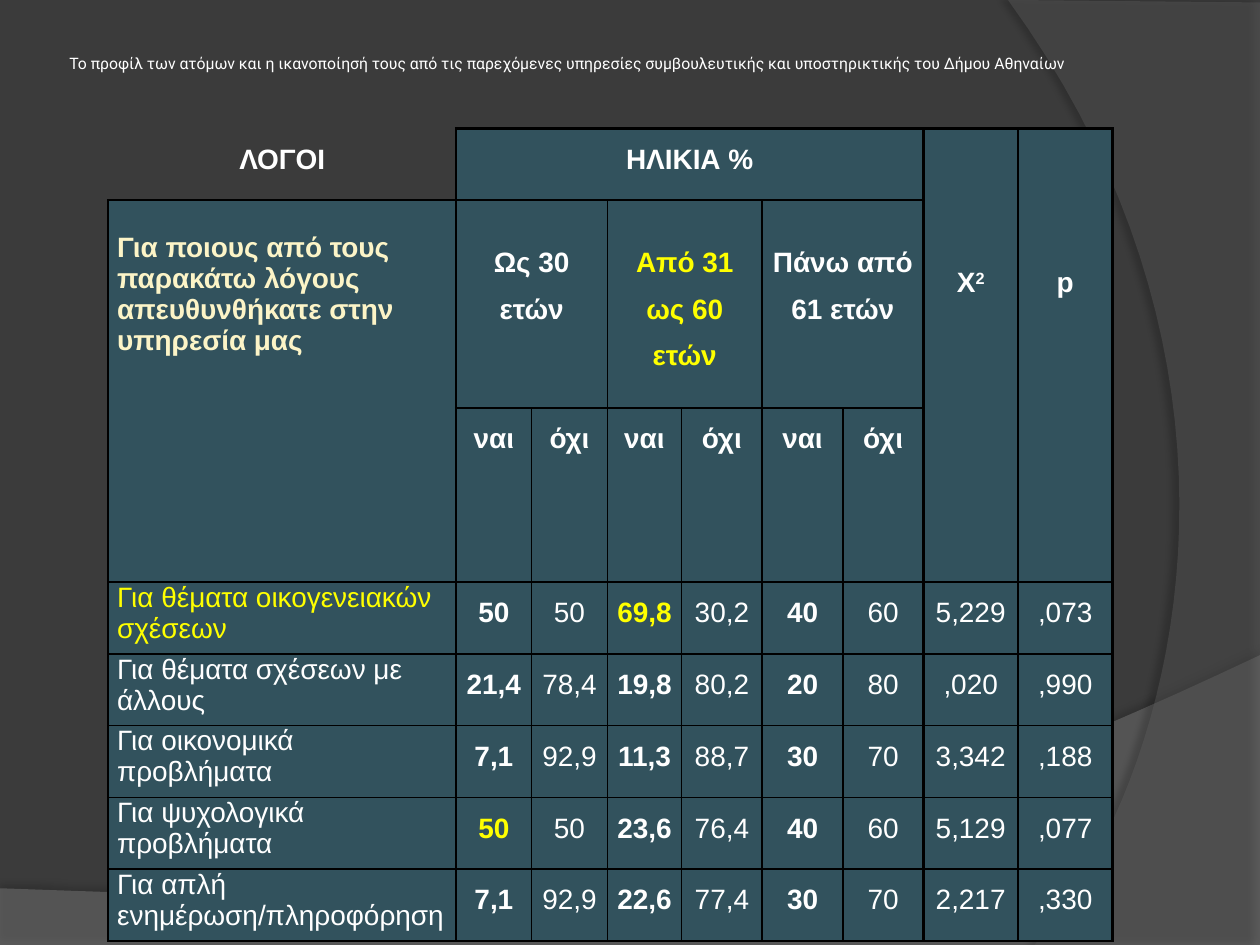
"""Build the slide on the reasons for visiting the service, by age group."""
import dataclasses
import typing

import lxml.etree
import pptx
import pptx.dml.color
import pptx.enum.text
import pptx.oxml.ns
import pptx.slide
import pptx.table
import pptx.util

Inches = pptx.util.Inches
Point = tuple[float, float]

BACKGROUND = pptx.dml.color.RGBColor(0x3B, 0x3B, 0x3B)
WAVE_GREY = pptx.dml.color.RGBColor(0x7F, 0x7F, 0x7F)
ARC_GREY = pptx.dml.color.RGBColor(0x5E, 0x5E, 0x5E)
WHITE = pptx.dml.color.RGBColor(0xFF, 0xFF, 0xFF)
YELLOW = pptx.dml.color.RGBColor(0xFF, 0xFF, 0x00)
CREAM = pptx.dml.color.RGBColor(0xFC, 0xF4, 0xC7)
TEAL = pptx.dml.color.RGBColor(0x32, 0x52, 0x5D)
BLACK = pptx.dml.color.RGBColor(0x00, 0x00, 0x00)

NO_STYLE = "{2D5ABB26-0587-4C30-8999-92F81FD0307C}"
TITLE = ("Το προφίλ των ατόμων και η ικανοποίησή τους από τις παρεχόμενες υπηρεσίες "
         "συμβουλευτικής και υποστηρικτικής του Δήμου Αθηναίων")
COLUMN_WIDTHS = (2.76, 0.6, 0.6, 0.59, 0.64, 0.64, 0.64, 0.75, 0.75)
ROW_HEIGHTS = (0.57, 1.65, 1.35) + (0.57,) * 5
THICK_COLUMN_EDGES = (0, 1, 7, 8, 9)
THICK_ROW_EDGES = (0, 1, 3, 8)
FIRST_DATA_ROW = 3
REASONS = (
    ("Για θέματα οικογενειακών σχέσεων", "50", "50", "69,8", "30,2", "40", "60", "5,229", ",073"),
    ("Για θέματα σχέσεων με άλλους", "21,4", "78,4", "19,8", "80,2", "20", "80", ",020", ",990"),
    ("Για οικονομικά προβλήματα", "7,1", "92,9", "11,3", "88,7", "30", "70", "3,342", ",188"),
    ("Για ψυχολογικά προβλήματα", "50", "50", "23,6", "76,4", "40", "60", "5,129", ",077"),
    ("Για απλή ενημέρωση/πληροφόρηση", "7,1", "92,9", "22,6", "77,4", "30", "70", "2,217", ",330"),
)
HIGHLIGHTS = {(0, 0), (0, 3), (3, 1)}


@dataclasses.dataclass(frozen=True)
class Entry:
    """One table entry with its place, span and look."""

    text: str
    row: int
    column: int
    rows: int = 1
    columns: int = 1
    color: pptx.dml.color.RGBColor = WHITE
    bold: bool = True
    top: float = 0
    after: float = 0
    superscript: str = ""
    filled: bool = True


@dataclasses.dataclass(frozen=True)
class Backdrop:
    """A curved panel: a straight outline closed by one Bézier curve."""

    corners: tuple[Point, ...]
    curve: tuple[Point, Point, Point]
    color: pptx.dml.color.RGBColor
    opacity: int
    shadow_opacity: int
    shadow_distance: float
    shadow_angle: int


BACKDROPS = (
    Backdrop(((0, 7.05), (0, 7.5), (10, 7.5), (10, 5.2)),
             ((5.59, 7.29), (3.91, 7.19), (0, 7.05)), WAVE_GREY, 45, 35, 3.5, 270),
    Backdrop(((10, 0.02), (10, 7.5), (8.21, 7.5)),
             ((9.35, 6.19), (10.18, 3), (8, 0)), ARC_GREY, 40, 45, 4, 180),
)
HEADINGS = (
    Entry("ΛΟΓΟΙ", 0, 0, after=12, filled=False),
    Entry("ΗΛΙΚΙΑ %", 0, 1, columns=6, after=12),
    Entry("Χ", 0, 7, rows=3, top=0.98, superscript="2"),
    Entry("p", 0, 8, rows=3, top=0.98),
    Entry("Για ποιους από τους παρακάτω λόγους απευθυνθήκατε στην υπηρεσία μας",
          1, 0, rows=2, color=CREAM, top=0.25),
    Entry("Ως 30 ετών", 1, 1, columns=2, top=0.25),
    Entry("Από 31 ως 60 ετών", 1, 3, columns=2, color=YELLOW, top=0.25),
    Entry("Πάνω από 61 ετών", 1, 5, columns=2, top=0.25),
)


def apply(target: typing.Any, values: dict[str, typing.Any]) -> None:
    """Set each named format value on the target."""
    for name, value in values.items():
        setattr(target, name, value)


def add_node(parent: typing.Any, tag: str, **attributes: typing.Any) -> typing.Any:
    """Append a drawing element with the given attributes."""
    node = lxml.etree.SubElement(parent, pptx.oxml.ns.qn(f"a:{tag}"))
    for name, value in attributes.items():
        node.set(name, str(value))
    return node


def bezier(points: tuple[Point, ...], steps: int = 40) -> list[Point]:
    """Return evenly stepped points along a cubic curve."""
    weights = [((1 - t) ** 3, 3 * t * (1 - t) ** 2, 3 * t * t * (1 - t), t ** 3)
               for t in (step / steps for step in range(1, steps + 1))]
    return [(sum(w * p[0] for w, p in zip(row, points)),
             sum(w * p[1] for w, p in zip(row, points))) for row in weights]


def draw_backdrop(slide: pptx.slide.Slide, backdrop: Backdrop) -> None:
    """Draw a translucent curved panel with a soft shadow."""
    outline = [*backdrop.corners, *bezier((backdrop.corners[-1], *backdrop.curve))]
    (start_x, start_y), *rest = [(Inches(x), Inches(y)) for x, y in outline]
    builder = slide.shapes.build_freeform(start_x, start_y)
    builder.add_line_segments(rest, close=True)
    panel = builder.convert_to_shape()
    panel.fill.solid()
    panel.fill.fore_color.rgb = backdrop.color
    panel.line.fill.background()
    panel.shadow.inherit = False
    properties = panel._element.spPr
    tint = properties.find(pptx.oxml.ns.qn("a:solidFill"))[0]
    add_node(tint, "alpha", val=backdrop.opacity * 1000)
    effects = properties.find(pptx.oxml.ns.qn("a:effectLst"))
    shadow = add_node(effects, "outerShdw", blurRad=pptx.util.Pt(4),
                      dist=pptx.util.Pt(backdrop.shadow_distance),
                      dir=backdrop.shadow_angle * 60000, rotWithShape=0)
    shade = add_node(shadow, "srgbClr", val=BLACK)
    add_node(shade, "alpha", val=backdrop.shadow_opacity * 1000)


def draw_title(slide: pptx.slide.Slide) -> None:
    """Draw the small heading line."""
    heading = slide.shapes.add_textbox(Inches(0.5), Inches(0.3), Inches(8.17), Inches(0.56))
    apply(heading.text_frame, {
        "word_wrap": True, "vertical_anchor": pptx.enum.text.MSO_ANCHOR.MIDDLE,
        "margin_left": Inches(0.05), "margin_right": Inches(0.05),
        "margin_top": Inches(0.05), "margin_bottom": Inches(0.2)})
    words = heading.text_frame.paragraphs[0].add_run()
    words.text = TITLE
    apply(words.font, {"name": "Roboto", "size": pptx.util.Pt(9)})
    words.font.color.rgb = WHITE


def draw_borders(cell: pptx.table._Cell, entry: Entry, row: int, column: int) -> None:
    """Rule the outer edges of an entry on one of its grid cells."""
    first = (row, column) == (entry.row, entry.column)
    right, bottom = entry.column + entry.columns, entry.row + entry.rows
    sides = (("lnL", entry.column, column == entry.column, THICK_COLUMN_EDGES),
             ("lnR", right, column + 1 == right, THICK_COLUMN_EDGES),
             ("lnT", entry.row, row == entry.row, THICK_ROW_EDGES),
             ("lnB", bottom, row + 1 == bottom, THICK_ROW_EDGES))
    properties = cell._tc.get_or_add_tcPr()
    for tag, edge, outer, thick_edges in sides:
        if not (first or outer):
            continue
        weight = 1.5 if edge in thick_edges else 1
        line = add_node(properties, tag, w=pptx.util.Pt(weight))
        if entry.filled or tag in ("lnR", "lnB"):
            add_node(add_node(line, "solidFill"), "srgbClr", val=BLACK)
        else:
            add_node(line, "noFill")


def draw_entry(table: pptx.table.Table, entry: Entry) -> None:
    """Merge, rule, fill and write one table entry."""
    origin = table.cell(entry.row, entry.column)
    last_row, last_column = entry.row + entry.rows - 1, entry.column + entry.columns - 1
    if entry.rows * entry.columns > 1:
        origin.merge(table.cell(last_row, last_column))
    for row in range(entry.row, last_row + 1):
        for column in range(entry.column, last_column + 1):
            cell = table.cell(row, column)
            draw_borders(cell, entry, row, column)
            if entry.filled:
                cell.fill.solid()
                cell.fill.fore_color.rgb = TEAL
            else:
                cell.fill.background()
    apply(origin, {"margin_left": Inches(0.07), "margin_right": Inches(0.07),
                   "margin_top": Inches(entry.top), "margin_bottom": 0})
    paragraph = origin.text_frame.paragraphs[0]
    if entry.column or not entry.row:
        apply(paragraph, {"alignment": pptx.enum.text.PP_ALIGN.CENTER, "line_spacing": 1.5,
                          "space_after": pptx.util.Pt(entry.after)})
    for text, baseline in ((entry.text, 0), (entry.superscript, 30000)):
        if text:
            run = paragraph.add_run()
            run.text = text
            apply(run.font, {"name": "Arial", "size": pptx.util.Pt(16), "bold": entry.bold})
            run.font.color.rgb = entry.color
            run._r.get_or_add_rPr().set("baseline", str(baseline))


def draw_table(slide: pptx.slide.Slide) -> None:
    """Draw the table of reasons by age group."""
    frame = slide.shapes.add_table(
        len(ROW_HEIGHTS), len(COLUMN_WIDTHS), Inches(0.86), Inches(1.02),
        Inches(sum(COLUMN_WIDTHS)), Inches(sum(ROW_HEIGHTS)))
    table = frame.table
    apply(table, {"first_row": False, "horz_banding": False})
    next(frame._element.iter(pptx.oxml.ns.qn("a:tableStyleId"))).text = NO_STYLE
    for column, width in zip(table.columns, COLUMN_WIDTHS):
        column.width = Inches(width)
    for row, height in zip(table.rows, ROW_HEIGHTS):
        row.height = Inches(height)
    answers = [Entry("ναι" if column % 2 else "όχι", 2, column) for column in range(1, 7)]
    results = [Entry(text, FIRST_DATA_ROW + index, column, bold=column in (1, 3, 5),
                     color=YELLOW if (index, column) in HIGHLIGHTS else WHITE)
               for index, reason in enumerate(REASONS) for column, text in enumerate(reason)]
    for entry in (*HEADINGS, *answers, *results):
        draw_entry(table, entry)


def main() -> None:
    """Build and save the presentation."""
    deck = pptx.Presentation()
    apply(deck, {"slide_width": Inches(10), "slide_height": Inches(7.5)})
    slide = deck.slides.add_slide(deck.slide_layouts[6])
    slide.background.fill.solid()
    slide.background.fill.fore_color.rgb = BACKGROUND
    for backdrop in BACKDROPS:
        draw_backdrop(slide, backdrop)
    draw_title(slide)
    draw_table(slide)
    deck.save("out.pptx")


if __name__ == "__main__":
    main()
